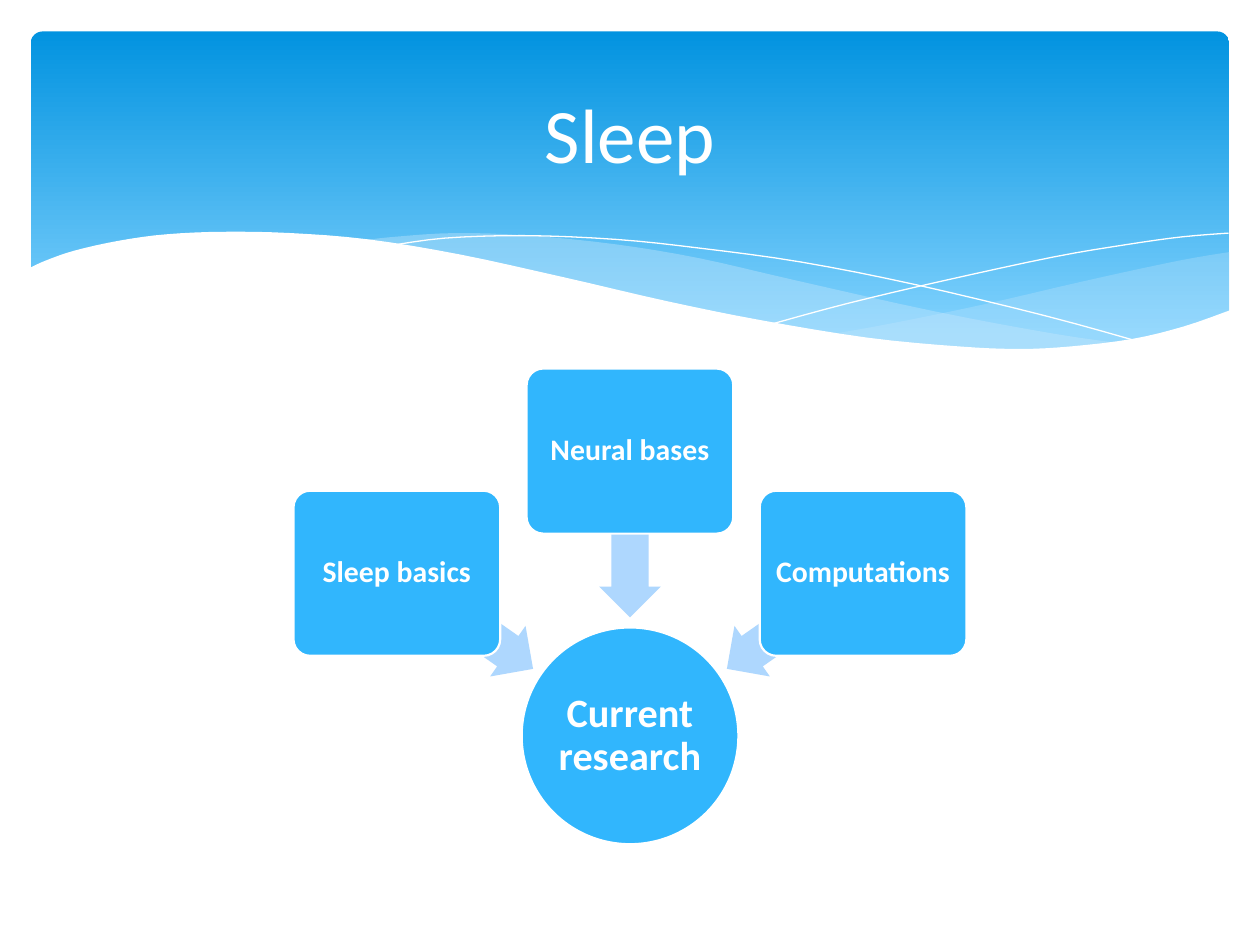
from lxml import etree
from pptx import Presentation
from pptx.dml.color import RGBColor
from pptx.enum.shapes import MSO_SHAPE as Shape
from pptx.enum.text import MSO_ANCHOR as Anchor, PP_ALIGN as Align
from pptx.oxml.ns import qn
from pptx.util import Cm, Pt

WHITE, BLUE, PALE, MIST = "FFFFFF", "31B6FD", "AED7FE", "C6E7FC"
FONT = "Calibri"


def inch(value):
    return Cm(value * 2.54)


def rgb(code):
    return RGBColor.from_string(code)


def smooth(knots, steps=4):
    """Points of a Catmull-Rom curve that passes through the knots."""
    ends = [knots[0], *knots, knots[-1]]
    curve = []
    for a, b, c, d in zip(ends, ends[1:], ends[2:], ends[3:]):
        for i in range(steps):
            t = i / steps
            curve.append(tuple(
                q + t * (r - p) / 2 + t * t * (p - 2.5 * q + 2 * r - s / 2)
                + t ** 3 * (1.5 * (q - r) + (s - p) / 2)
                for p, q, r, s in zip(a, b, c, d)))
    return curve + [knots[-1]]


class Deck:
    def __init__(self, width, height):
        self.prs = Presentation()
        self.prs.slide_width, self.prs.slide_height = inch(width), inch(height)
        self.s = self.prs.slides.add_slide(self.prs.slide_layouts[6])

    def paint(self, sp, fill=None, line=None, width=0, alpha=None):
        sp.shadow.inherit = False
        if fill:
            sp.fill.solid()
            sp.fill.fore_color.rgb = rgb(fill)
        else:
            sp.fill.background()
        if alpha is not None:
            color = sp._element.spPr.find(qn("a:solidFill"))[0]
            etree.SubElement(color, qn("a:alpha"), val=str(alpha * 1000))
        if line:
            sp.line.color.rgb = rgb(line)
            sp.line.width = Pt(width)
        else:
            sp.line.fill.background()

    def shape(self, kind, cx, cy, w, h, fill, line=None, adj=(), rotation=0):
        """Preset shape placed by its centre."""
        sp = self.s.shapes.add_shape(
            kind, inch(cx - w / 2), inch(cy - h / 2), inch(w), inch(h))
        for i, value in enumerate(adj):
            sp.adjustments[i] = value
        sp.rotation = rotation
        self.paint(sp, fill, line, 1.25)
        return sp

    def banner(self, cx, cy, w, h, stops, adj):
        sp = self.shape(Shape.ROUNDED_RECTANGLE, cx, cy, w, h, WHITE, adj=adj)
        sp.fill.gradient()
        sp.fill.gradient_angle = 270
        for stop, (position, color) in zip(sp.fill.gradient_stops, stops):
            stop.position = position
            stop.color.rgb = rgb(color)

    def outline(self, points, close=True, **style):
        first, *rest = [(inch(x), inch(y)) for x, y in points]
        builder = self.s.shapes.build_freeform(*first)
        builder.add_line_segments(rest, close=close)
        self.paint(builder.convert_to_shape(), **style)

    def label(self, sp, text, size, inset, bold=False, spacing=None):
        tf = sp.text_frame
        tf.word_wrap = True
        tf.vertical_anchor = Anchor.MIDDLE
        tf.margin_left = tf.margin_right = inch(inset)
        tf.margin_top = tf.margin_bottom = inch(inset)
        p = tf.paragraphs[0]
        p.text, p.alignment, p.line_spacing = text, Align.CENTER, spacing
        p.font.name, p.font.size, p.font.bold = FONT, Pt(size), bold
        p.font.color.rgb = rgb(WHITE)

    def title(self, x, y, w, h, text):
        box = self.s.shapes.add_textbox(inch(x), inch(y), inch(w), inch(h))
        self.label(box, text, 44, 0.05)


def main():
    deck = Deck(10, 7.5)

    # Banner
    deck.banner(5, 1.6, 9.51, 2.7, [(0, "0293E0"), (0.9, "83D3FE")], [0.034])

    # Translucent waves
    right_wave = smooth([(9.76, 2), (9.35, 2.07), (8.61, 2.23), (7.79, 2.42),
                         (7.06, 2.57), (6.61, 2.65)])
    right_wave += smooth([(6.61, 2.65), (7.05, 2.71), (7.57, 2.76), (8.03, 2.78),
                          (8.54, 2.76), (8.97, 2.7), (9.35, 2.62), (9.76, 2.47)])
    deck.outline(right_wave, fill=MIST, alpha=29)

    long_wave = smooth([(8.93, 2.73), (8.37, 2.65), (7.41, 2.47), (6.29, 2.22),
                        (5.55, 2.05), (4.89, 1.94), (4.2, 1.87), (3.61, 1.85),
                        (3.13, 1.88), (2.86, 1.91)])
    long_wave += smooth([(2.86, 1.91), (3.42, 1.99), (4.04, 2.11), (4.91, 2.32),
                         (5.66, 2.48), (6.5, 2.64), (7.22, 2.74), (7.85, 2.78),
                         (8.38, 2.78), (8.93, 2.73)])
    deck.outline(long_wave, fill=MIST, alpha=40)

    # Thin crossing lines
    falling = [(3.09, 1.95), (3.53, 1.89), (4.16, 1.87), (4.89, 1.9), (5.56, 1.97),
               (6.36, 2.08), (7.27, 2.26), (8.31, 2.51), (9.07, 2.72)]
    rising = [(6.13, 2.57), (6.72, 2.41), (7.48, 2.23), (8.36, 2.04), (8.95, 1.94),
              (9.38, 1.88), (9.75, 1.85)]
    for knots in (falling, rising):
        deck.outline(smooth(knots), close=False, line=WHITE)

    # White lower edge of the banner
    edge = smooth([(9.77, 2.46), (9.4, 2.59), (8.99, 2.69), (8.5, 2.75),
                   (8.09, 2.77), (7.61, 2.75), (6.88, 2.68), (6.03, 2.54),
                   (5.29, 2.39), (4.47, 2.2), (3.65, 2.02), (2.92, 1.9),
                   (2.3, 1.85), (1.77, 1.84), (1.32, 1.86), (0.95, 1.91),
                   (0.59, 1.99), (0.36, 2.07), (0.23, 2.13)])
    deck.outline(edge + [(0.23, 3.29), (9.77, 3.29)], fill=WHITE)

    deck.title(0.5, 0.37, 9, 1.37, "Sleep")

    # Topics pointing to the central circle
    hub = deck.shape(Shape.OVAL, 5, 5.84, 1.72, 1.72, BLUE, WHITE)
    deck.label(hub, "Current research", 23, 0.02, True, 0.9)

    topics = [("Sleep basics", -1, 215), ("Neural bases", 0, 270),
              ("Computations", 1, 325)]
    for text, side, angle in topics:
        drop = abs(side)
        deck.shape(Shape.LEFT_ARROW, 5 + 1.31 * side, 4.24 + 0.69 * drop,
                   1.32, 0.49, PALE, adj=(0.6, 0.5), rotation=angle)
        box = deck.shape(Shape.ROUNDED_RECTANGLE, 5 + 1.85 * side,
                         3.58 + 0.97 * drop, 1.64, 1.31, BLUE, WHITE, [0.1])
        deck.label(box, text, 17, 0.04, True, 0.9)

    deck.prs.save("out.pptx")


if __name__ == "__main__":
    main()
